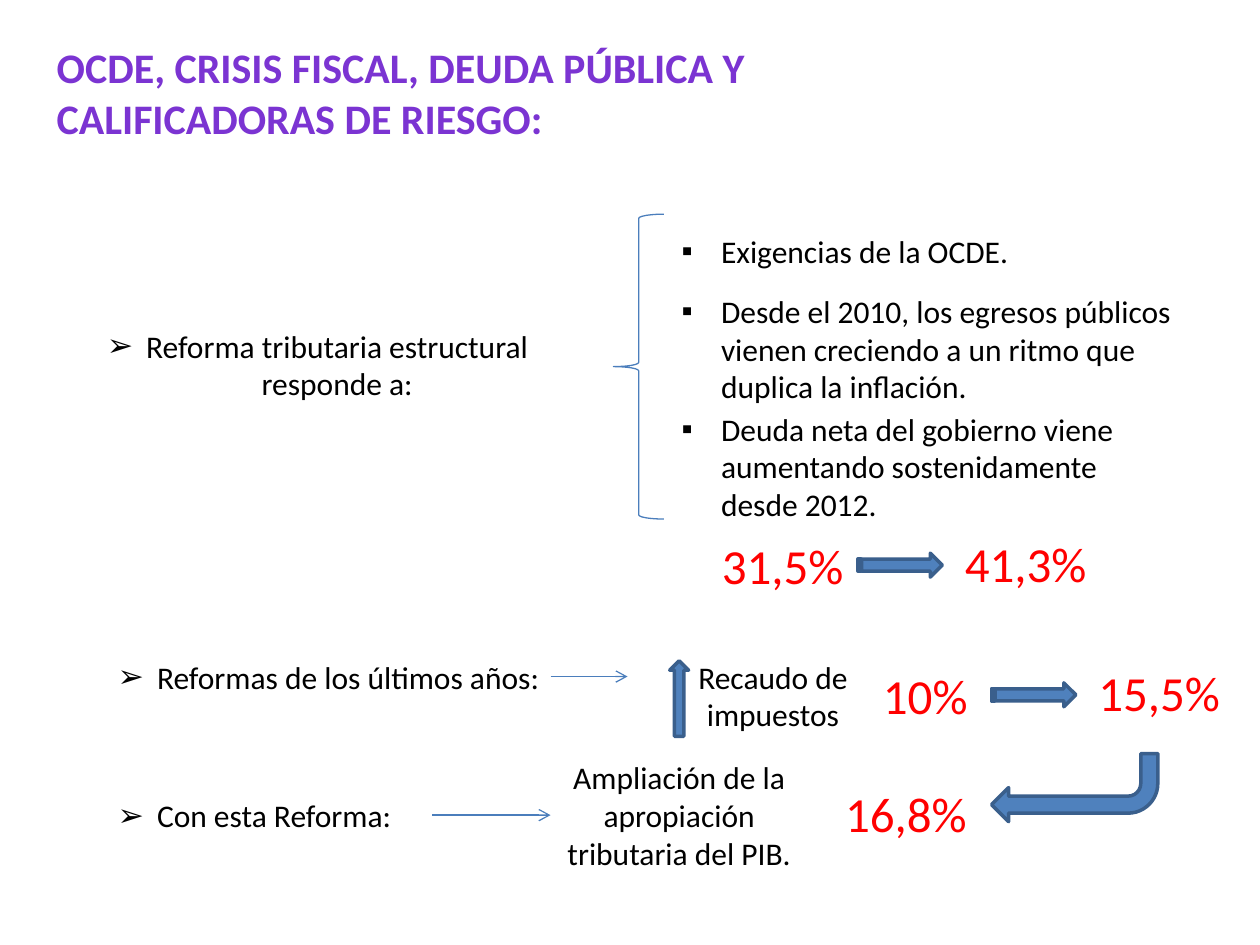
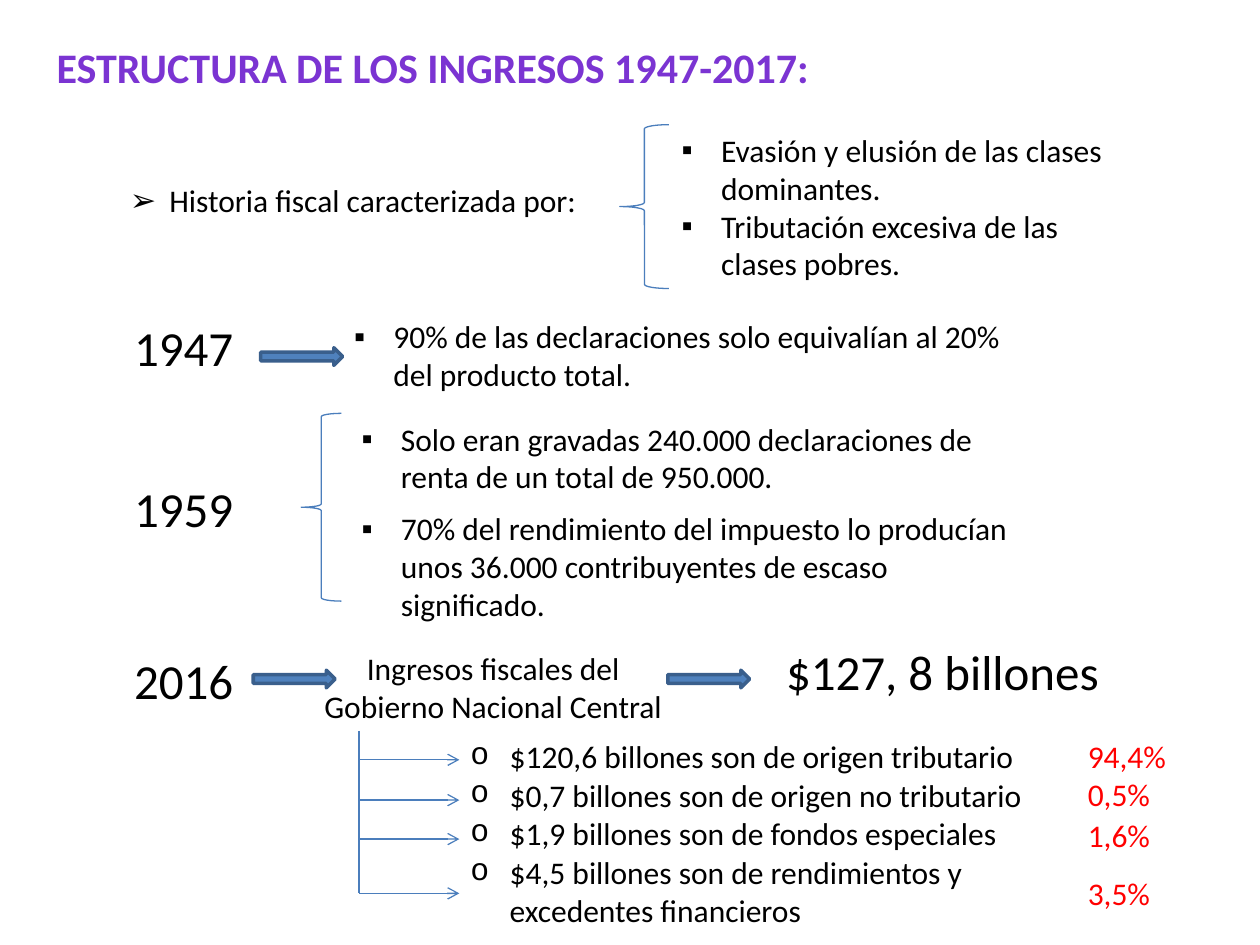
from lxml.etree import SubElement
from pptx import Presentation
from pptx.dml.color import RGBColor
from pptx.enum.shapes import MSO_CONNECTOR, MSO_SHAPE
from pptx.enum.text import MSO_ANCHOR, MSO_AUTO_SIZE, PP_ALIGN
from pptx.oxml.ns import qn
from pptx.util import Pt


class Theme:
    font = "Calibri"
    title, text, accent = (RGBColor.from_string(c) for c in ("7B34D2", "000000", "FF0000"))
    fill, edge, line = (RGBColor.from_string(c) for c in ("4F81BD", "3A5F8C", "4B7EBC"))
    title_size, body_size, big_size = 24, 18, 28
    indent = 22.5
    thin, thick = 0.75, 2


LEFT, CENTER = PP_ALIGN.LEFT, PP_ALIGN.CENTER
BRACE, RIGHT = MSO_SHAPE.LEFT_BRACE, MSO_SHAPE.RIGHT_ARROW
STRIPED, UP, BENT = MSO_SHAPE.STRIPED_RIGHT_ARROW, MSO_SHAPE.UP_ARROW, MSO_SHAPE.BENT_ARROW
BULLET_FONTS = {"➢": "Arial", "▪": "Arial", "o": "Courier New"}

# Content: all boxes are (left, top, width, height) in points
TITLE_BOX = (25.2, 20.2, 504, 65.5)

REFORM = {
    "title": "OCDE, CRISIS FISCAL, DEUDA PÚBLICA Y CALIFICADORAS DE RIESGO:",
    # bullet, box, alignment, [(text, space before)]
    "lists": [
        ("➢", (36.7, 183, 289.5, 51), CENTER,
         [("Reforma tributaria estructural responde a:", 0)]),
        ("▪", (382.3, 129, 294.5, 173), LEFT,
         [("Exigencias de la OCDE.", 0),
          ("Desde el 2010, los egresos públicos vienen creciendo a un ritmo "
           "que duplica la inflación.", 12.5),
          ("Deuda neta del gobierno viene aumentando sostenidamente desde 2012.", 2.5)]),
        ("➢", (60, 372.2, 266.4, 29), LEFT, [("Reformas de los últimos años:", 0)]),
        ("➢", (60, 451.4, 187, 29), LEFT, [("Con esta Reforma:", 0)]),
    ],
    # text, box
    "labels": [
        ("Recaudo de impuestos", (382.3, 372.2, 118.8, 51)),
        ("Ampliación de la apropiación tributaria del PIB.", (306, 429.8, 164.2, 73)),
    ],
    # text, left, top, width, size, colour
    "figures": [
        ("31,5%", 405.4, 302.4, 91, Theme.big_size, Theme.accent),
        ("41,3%", 544.3, 301.5, 85, Theme.big_size, Theme.accent),
        ("10%", 497.5, 376.5, 91, Theme.big_size, Theme.accent),
        ("15,5%", 620.6, 375.1, 85, Theme.big_size, Theme.accent),
        ("16,8%", 475.9, 444.2, 91, Theme.big_size, Theme.accent),
    ],
    # preset, box, rotation
    "shapes": [
        (BRACE, (350.6, 122.4, 28.8, 174.2), 0),
        (STRIPED, (490.3, 316.1, 48.2, 13.7), 0),
        (STRIPED, (566.6, 390.2, 48.2, 13.7), 0),
        (UP, (382.7, 377.6, 10.8, 43.2), 0),
        (BENT, (566.6, 430.6, 95, 38.9), 180),
    ],
    # start, end, arrowhead
    "lines": [
        ((247, 465.8), (314.6, 465.8), True),
        ((314.6, 386.6), (358.6, 386.6), True),
    ],
}

SPINE_X, BRANCH_END, SPINE_TOP = 205.2, 262.5, 417.6
BRANCHES = (434.2, 457.2, 479.5, 510.5)
SHARES = [("94,4%", 417.6), ("0,5%", 439.2), ("1,6%", 463), ("3,5%", 496.1)]
YEARS = [("1947", 177.8), ("1959", 270), ("2016", 367.9)]

INCOME = {
    "title": "ESTRUCTURA DE LOS INGRESOS 1947-2017:",
    "lists": [
        ("➢", (67, 100.1, 277.2, 29), LEFT, [("Historia fiscal caracterizada por:", 0)]),
        ("▪", (382.3, 71.3, 259, 94), LEFT,
         [("Evasión y elusión de las clases dominantes.", 0),
          ("Tributación excesiva de las clases pobres.", 0)]),
        ("▪", (195.1, 177.8, 387.4, 51), LEFT,
         [("90% de las declaraciones solo equivalían al 20% del producto total.", 0)]),
        ("▪", (199.4, 236.2, 387.4, 124), LEFT,
         [("Solo eran gravadas 240.000 declaraciones de renta de un total de 950.000.", 0),
          ("70% del rendimiento del impuesto lo producían unos 36.000 contribuyentes "
           "de escaso significado.", 8)]),
        ("o", (261.7, 417.6, 347.8, 118), LEFT,
         [("$120,6 billones son de origen tributario", 0),
          ("$0,7 billones son de origen no tributario", 0.5),
          ("$1,9 billones son de fondos especiales", 0.5),
          ("$4,5 billones son de rendimientos y excedentes financieros", 0.5)]),
    ],
    "labels": [
        ("Ingresos fiscales del Gobierno Nacional Central", (170.6, 367.2, 222.5, 51)),
    ],
    "figures": [
        *((year, 69.5, top, 80.6, Theme.big_size, Theme.text) for year, top in YEARS),
        ("$127, 8 billones", 442.1, 362.9, 206, Theme.big_size, Theme.text),
        *((share, 614.5, top, 68.4, Theme.body_size, Theme.accent) for share, top in SHARES),
    ],
    "shapes": [
        (BRACE, (354.2, 71.3, 28.1, 93.6), 0),
        (BRACE, (172.1, 236.2, 23, 107.3), 0),
        *((RIGHT, (left, top, 46.8, 10.1), 0)
          for left, top in ((149, 198.7), (144.7, 383), (381.6, 383))),
    ],
    "lines": [
        ((SPINE_X, SPINE_TOP), (SPINE_X, BRANCHES[-1]), False),
        *(((SPINE_X, y), (BRANCH_END, y), True) for y in BRANCHES),
    ],
}


# Text
def place(s, box):
    s.left, s.top, s.width, s.height = map(Pt, box)


def add_bullet(p, char):
    pPr = p._p.get_or_add_pPr()
    pPr.set("marL", str(Pt(Theme.indent)))
    pPr.set("indent", str(-Pt(Theme.indent)))
    SubElement(pPr, qn("a:buFont")).set("typeface", BULLET_FONTS[char])
    SubElement(pPr, qn("a:buChar")).set("char", char)


def write(s, items, size, color, align=LEFT, bold=False, bullet=None):
    tf = s.text_frame
    tf.text = "\n".join(text for text, _ in items)
    tf.word_wrap = True
    tf.auto_size = MSO_AUTO_SIZE.NONE
    tf.vertical_anchor = MSO_ANCHOR.TOP
    for p, (_, gap) in zip(tf.paragraphs, items):
        if bullet:
            add_bullet(p, bullet)
        p.alignment, p.line_spacing, p.space_before = align, 1.0, Pt(gap)
        for r in p.runs:
            f = r.font
            f.name, f.size, f.bold = Theme.font, Pt(size), bold
            f.color.rgb = color


def add_text(slide, text, box, size, color, align=LEFT):
    write(slide.shapes.add_textbox(*map(Pt, box)), [(text, 0)], size, color, align)


# Arrows, braces and lines
def add_preset(slide, preset, box, rotation):
    s = slide.shapes.add_shape(preset, *map(Pt, box))
    s.shadow.inherit = False
    s.rotation = rotation
    if preset == BRACE:
        s.fill.background()
        s.line.color.rgb, s.line.width = Theme.line, Pt(Theme.thin)
    else:
        s.fill.solid()
        s.fill.fore_color.rgb = Theme.fill
        s.line.color.rgb, s.line.width = Theme.edge, Pt(Theme.thick)


def add_line(slide, start, end, arrowhead):
    c = slide.shapes.add_connector(MSO_CONNECTOR.STRAIGHT, *map(Pt, start + end))
    c.line.color.rgb, c.line.width = Theme.line, Pt(Theme.thin)
    if arrowhead:
        SubElement(c.line._get_or_add_ln(), qn("a:tailEnd")).set("type", "arrow")
    SubElement(c._element.spPr, qn("a:effectLst"))


# Slides
def add_slide(prs, content):
    slide = prs.slides.add_slide(prs.slide_layouts.get_by_name("Comparison"))
    title, *bodies = slide.placeholders
    place(title, TITLE_BOX)
    write(title, [(content["title"], 0)], Theme.title_size, Theme.title, bold=True)
    for i, (bullet, box, align, items) in enumerate(content["lists"]):
        if i < len(bodies):
            s = bodies[i]
            place(s, box)
        else:
            s = slide.shapes.add_textbox(*map(Pt, box))
        write(s, items, Theme.body_size, Theme.text, align, bullet=bullet)
    for text, box in content["labels"]:
        add_text(slide, text, box, Theme.body_size, Theme.text, CENTER)
    for text, left, top, width, size, color in content["figures"]:
        add_text(slide, text, (left, top, width, size * 1.2 + 7.2), size, color)
    for shape in content["shapes"]:
        add_preset(slide, *shape)
    for line in content["lines"]:
        add_line(slide, *line)


def main():
    prs = Presentation()
    prs.slide_width, prs.slide_height = Pt(720), Pt(540)
    for content in (REFORM, INCOME):
        add_slide(prs, content)
    prs.save("out.pptx")


if __name__ == "__main__":
    main()
